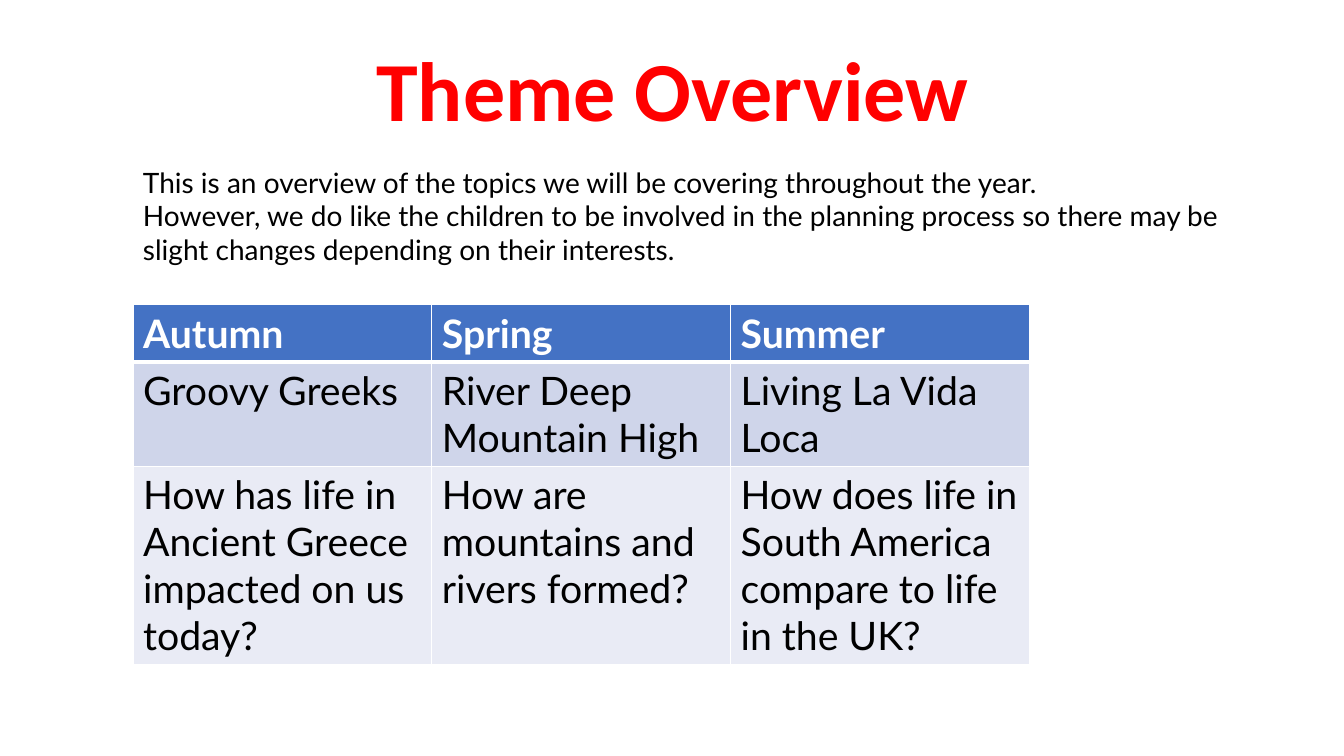
from lxml import etree
from pptx import Presentation
from pptx.dml.color import RGBColor
from pptx.enum.text import MSO_ANCHOR, PP_ALIGN
from pptx.oxml.ns import qn
from pptx.util import Inches, Pt

TERMS = [
    ["Autumn", "Spring", "Summer"],
    ["Groovy Greeks", "River Deep Mountain High", "Living La Vida Loca"],
    ["How has life in Ancient Greece impacted on us today?",
     "How are mountains and rivers formed?",
     "How does life in South America compare to life in the UK?"],
]
ROW_HEIGHTS = [0.57, 1.03, 1.97]
ROW_FILLS = ["4472C4", "CFD5EA", "E9EBF5"]
INTRO = [
    "This is an overview of the topics we will be covering throughout the year.",
    "However, we do like the children to be involved in the planning process "
    "so there may be slight changes depending on their interests.",
]


def rgb(color):
    return RGBColor.from_string(color)


def add_run(p, text, size, color, font="Lato", bold=False):
    r = p.add_run()
    r.text = text
    r.font.size = Pt(size)
    r.font.name = font
    r.font.bold = bold
    r.font.color.rgb = rgb(color)


def add_text_frame(slide, box):
    tf = slide.shapes.add_textbox(*map(Inches, box)).text_frame
    tf.word_wrap = True
    return tf


def add_title(slide, box):
    tf = add_text_frame(slide, box)
    tf.vertical_anchor = MSO_ANCHOR.MIDDLE
    p = tf.paragraphs[0]
    p.alignment = PP_ALIGN.CENTER
    p.line_spacing = 0.9
    add_run(p, "Theme Overview", 60, "FF0000", "Calibri", True)


def add_intro(slide, box):
    tf = add_text_frame(slide, box)
    for i, text in enumerate(INTRO):
        p = tf.add_paragraph() if i else tf.paragraphs[0]
        add_run(p, text, 20, "000000")


def set_borders(cell, widths, color="FFFFFF"):
    """Draw the left, right, top and bottom lines, widths in points."""
    tc_pr = cell._tc.get_or_add_tcPr()
    for i, (side, width) in enumerate(zip("LRTB", widths)):
        ln = etree.Element(qn(f"a:ln{side}"), w=str(Pt(width)))
        fill = etree.SubElement(ln, qn("a:solidFill"))
        etree.SubElement(fill, qn("a:srgbClr"), val=color)
        tc_pr.insert(i, ln)


def add_terms_table(slide, box):
    rows, cols = len(TERMS), len(TERMS[0])
    table = slide.shapes.add_table(rows, cols, *map(Inches, box)).table
    for column in table.columns:
        column.width = Inches(box[2] / cols)
    for i, texts in enumerate(TERMS):
        header = i == 0
        table.rows[i].height = Inches(ROW_HEIGHTS[i])
        for j, text in enumerate(texts):
            cell = table.cell(i, j)
            cell.fill.solid()
            cell.fill.fore_color.rgb = rgb(ROW_FILLS[i])
            # A thick line parts the header from the rows below
            set_borders(cell, (1, 1, 3 if i == 1 else 1, 3 if header else 1))
            add_run(cell.text_frame.paragraphs[0], text, 28,
                    "FFFFFF" if header else "000000", bold=header)


def main():
    prs = Presentation()
    prs.slide_width, prs.slide_height = Inches(13.33), Inches(7.5)
    slide = prs.slides.add_slide(prs.slide_layouts[6])
    add_title(slide, (0.92, 0.34, 11.5, 1.19))
    add_intro(slide, (1.32, 1.59, 11.5, 1.11))
    add_terms_table(slide, (1.32, 3.02, 8.89, sum(ROW_HEIGHTS)))
    prs.save("out.pptx")


if __name__ == "__main__":
    main()
